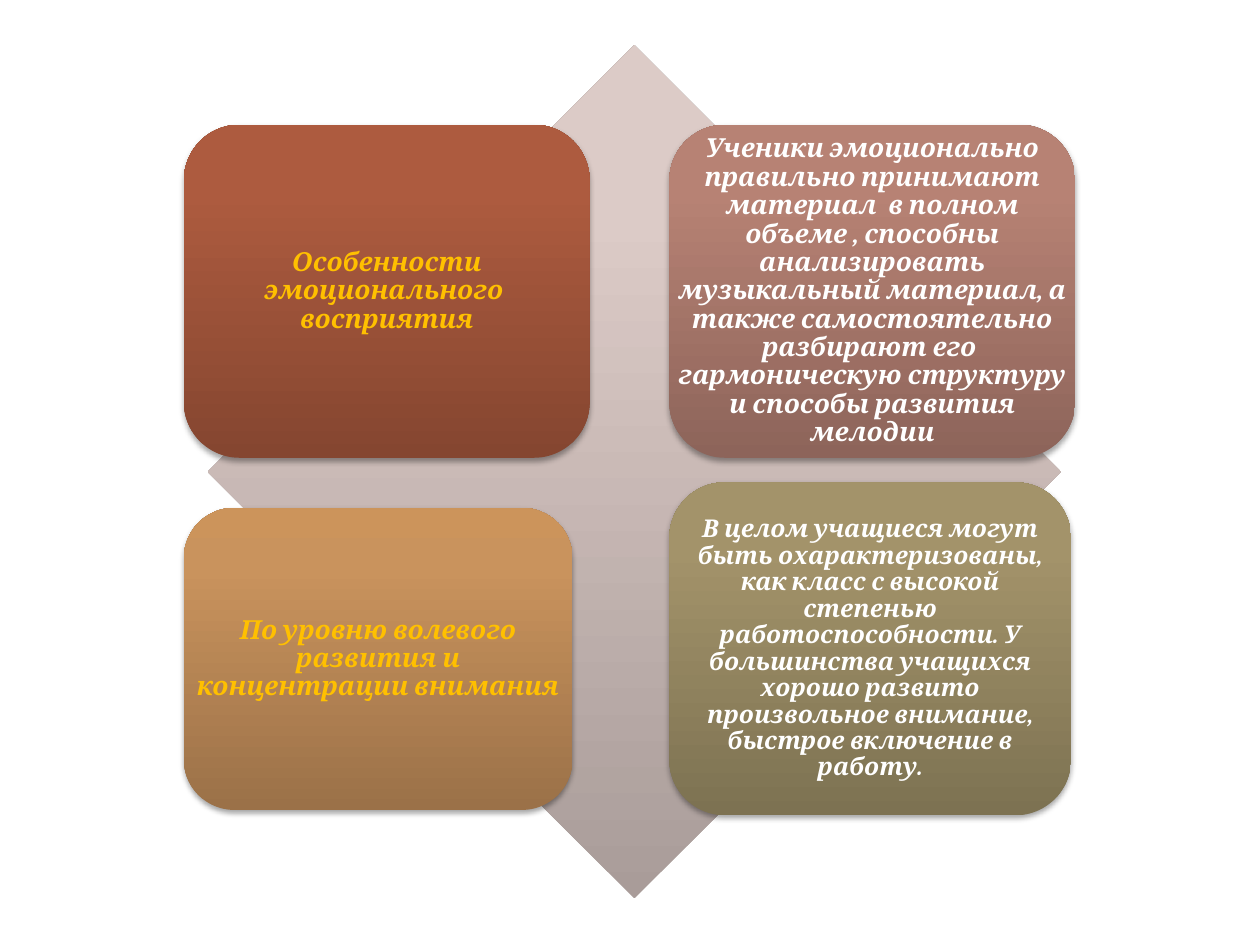
from copy import deepcopy
from dataclasses import dataclass

from lxml.etree import SubElement
from pptx import Presentation
from pptx.dml.color import RGBColor
from pptx.enum.shapes import MSO_SHAPE as Preset
from pptx.enum.text import MSO_ANCHOR as Anchor, PP_ALIGN as Align
from pptx.oxml.ns import qn
from pptx.util import Pt


@dataclass(frozen=True)
class Theme:
    font: str = "Cambria"
    heading: str = "FFC000"
    body: str = "FFFFFF"
    large: int = 15
    small: int = 14
    # Gradients run from the bottom edge to the top edge
    diamond: tuple = ("A99C99", "DCCBC7", "DDCCC8")
    rust: tuple = ("854630", "AD5B3F", "AF5A3D")
    rose: tuple = ("8D645A", "B78274", "B98274")
    amber: tuple = ("9B7148", "C9935D", "CC945B")
    olive: tuple = ("7D7252", "A3936A", "A49569")


theme = Theme()


def add_gradient_shape(preset, box, colors):
    shape = slide.shapes.add_shape(preset, *map(Pt, box))
    shape.fill.gradient()
    shape.fill.gradient_angle = 90
    stop_list = shape._element.spPr.find(".//" + qn("a:gsLst"))
    stop_list.append(deepcopy(stop_list[-1]))
    for stop, position, color in zip(shape.fill.gradient_stops, (0, 0.8, 1), colors):
        stop.position = position
        stop.color.rgb = RGBColor.from_string(color)
    shape.line.fill.background()
    shape.shadow.inherit = False
    return shape


def add_soft_shadow(shape):
    effects = shape._element.spPr.find(qn("a:effectLst"))
    shadow = SubElement(effects, qn("a:outerShdw"), blurRad=str(Pt(3.1)),
                        dist=str(Pt(1.8)), dir="5400000", rotWithShape="0")
    color = SubElement(shadow, qn("a:srgbClr"), val="000000")
    SubElement(color, qn("a:alpha"), val="35000")


presentation = Presentation()
presentation.slide_width, presentation.slide_height = Pt(720), Pt(540)
slide = presentation.slides.add_slide(presentation.slide_layouts[6])

# Diamond behind the cards
add_gradient_shape(Preset.DIAMOND, (118.8, 25.9, 487.5, 487.5), theme.diamond)

# Cards: topics on the left, findings on the right
left, right, top = 105.1, 382.5, 71.3
cards = [
    ((left, top, 231.8, 190.3), theme.rust, theme.heading, theme.large,
     "Особенности эмоционального  восприятия"),
    ((right, top, 231.8, 190.3), theme.rose, theme.body, theme.large,
     "Ученики эмоционально правильно принимают материал  в полном объеме , "
     "способны анализировать музыкальный материал, а также самостоятельно "
     "разбирают его  гармоническую структуру и способы развития мелодии"),
    ((left, 290.2, 222, 172.6), theme.amber, theme.heading, theme.large,
     "По уровню волевого развития и концентрации внимания"),
    ((right, 275.6, 229.5, 190.3), theme.olive, theme.body, theme.small,
     "В целом учащиеся могут быть охарактеризованы, как класс с высокой "
     "степенью работоспособности. У большинства учащихся хорошо развито "
     "произвольное внимание, быстрое включение в работу."),
]

for box, colors, text_color, size, text in cards:
    add_soft_shadow(add_gradient_shape(Preset.ROUNDED_RECTANGLE, box, colors))

    # The text uses the full card width, past the rounded corners' inset
    frame = slide.shapes.add_textbox(*map(Pt, box)).text_frame
    frame.word_wrap = True
    frame.vertical_anchor = Anchor.MIDDLE
    frame.margin_left = frame.margin_right = Pt(4.5)
    frame.margin_top = frame.margin_bottom = Pt(4.5)
    paragraph = frame.paragraphs[0]
    paragraph.text = text
    paragraph.alignment = Align.CENTER
    paragraph.line_spacing = 0.9
    paragraph.space_after = Pt(5)
    font = paragraph.font
    font.name, font.size = theme.font, Pt(size)
    font.bold = font.italic = True
    font.color.rgb = RGBColor.from_string(text_color)

presentation.save("out.pptx")
